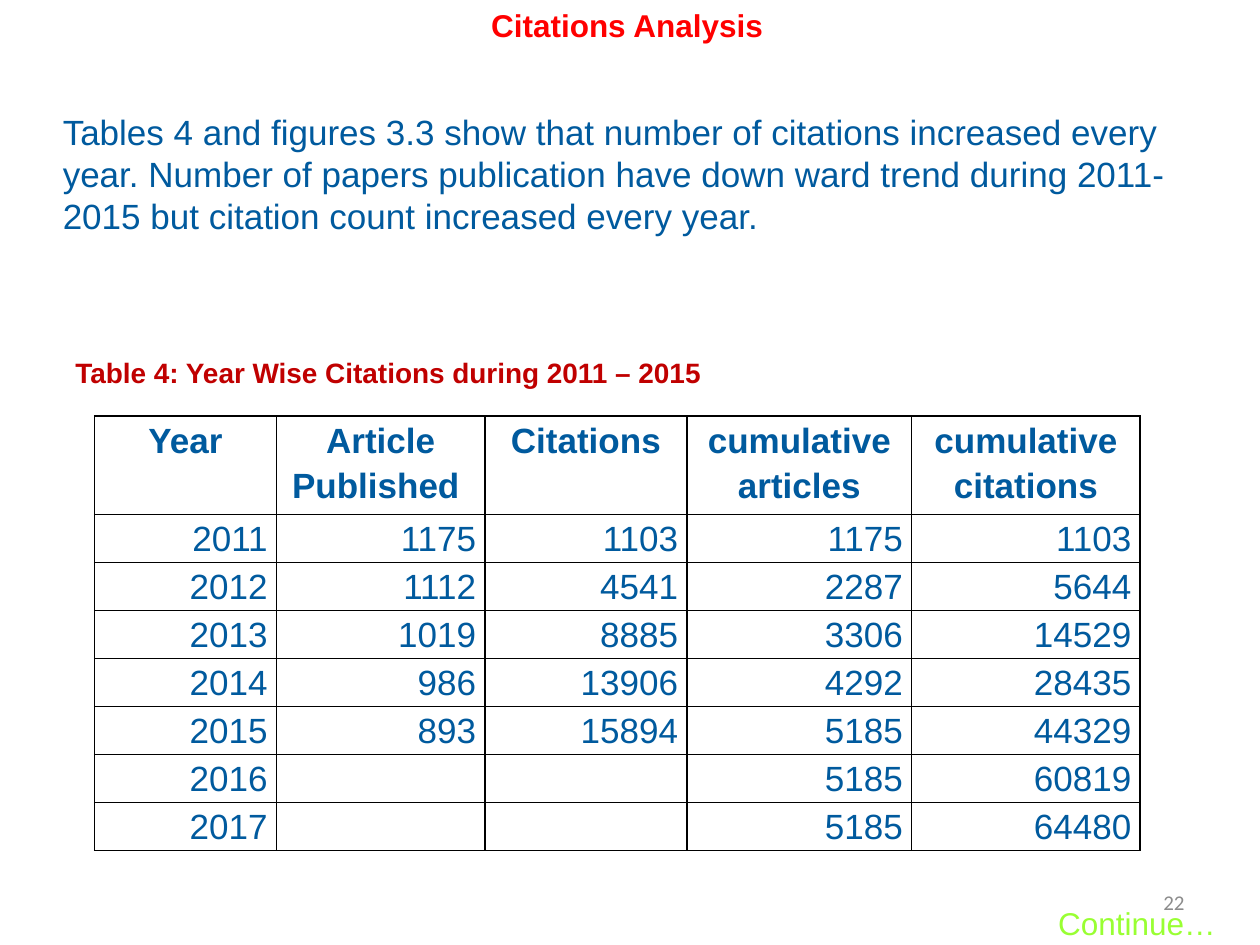
from lxml import etree
from pptx import Presentation
from pptx.dml.color import RGBColor
from pptx.enum.text import MSO_ANCHOR, PP_ALIGN
from pptx.oxml.ns import qn
from pptx.util import Inches, Pt

LEFT, CENTER, RIGHT = PP_ALIGN.LEFT, PP_ALIGN.CENTER, PP_ALIGN.RIGHT
TOP, MIDDLE = MSO_ANCHOR.TOP, MSO_ANCHOR.MIDDLE
WIDTH, HEIGHT = Inches(10), Inches(7.5)
COLORS = {
    "title": "FF0000",
    "caption": "C00000",
    "body": "005A9E",
    "continue": "99FF33",
    "number": "8C8C8C",
    "border": "000000",
    "background": "FFFFFF",
}
COLUMN_WEIGHTS = [1.45, 1.66, 1.61, 1.79, 1.82]
HEADER_WEIGHT, ROW_WEIGHT = 0.78, 0.38
CITATIONS = [
    ["Year", "Article Published ", "Citations", "cumulative articles", "cumulative citations"],
    ["2011", "1175", "1103", "1175", "1103"],
    ["2012", "1112", "4541", "2287", "5644"],
    ["2013", "1019", "8885", "3306", "14529"],
    ["2014", "986", "13906", "4292", "28435"],
    ["2015", "893", "15894", "5185", "44329"],
    ["2016", "", "", "5185", "60819"],
    ["2017", "", "", "5185", "64480"],
]


def scale(box):
    left, top, width, height = box
    return int(left * WIDTH), int(top * HEIGHT), int(width * WIDTH), int(height * HEIGHT)


def style_paragraph(paragraph, size, color, bold=False, align=LEFT, name="Arial"):
    paragraph.alignment = align
    font = paragraph.font
    font.name, font.size, font.bold = name, Pt(size), bold
    font.color.rgb = RGBColor.from_string(COLORS[color])


def add_text(slide, box, text, size, color, wrap=False, anchor=TOP, **style):
    frame = slide.shapes.add_textbox(*scale(box)).text_frame
    frame.word_wrap = wrap
    frame.vertical_anchor = anchor
    frame.text = text
    style_paragraph(frame.paragraphs[0], size, color, **style)


def add_borders(cell):
    properties = cell._tc.get_or_add_tcPr()
    for side in ("lnL", "lnR", "lnT", "lnB"):
        line = etree.SubElement(properties, qn(f"a:{side}"), w=str(Pt(1)))
        fill = etree.SubElement(line, qn("a:solidFill"))
        etree.SubElement(fill, qn("a:srgbClr"), val=COLORS["border"])


def fill_cell(cell, text, is_header):
    cell.margin_left = cell.margin_right = Inches(0.07)
    cell.margin_top = cell.margin_bottom = 0
    add_borders(cell)
    cell.fill.background()
    cell.text = text
    paragraph = cell.text_frame.paragraphs[0]
    paragraph.line_spacing = 1.15
    style_paragraph(paragraph, 20, "body", bold=is_header, align=CENTER if is_header else RIGHT)


def add_citation_table(slide, box):
    left, top, width, height = scale(box)
    table = slide.shapes.add_table(
        len(CITATIONS), len(COLUMN_WEIGHTS), left, top, width, height
    ).table
    table.horz_banding = False
    row_weights = [HEADER_WEIGHT] + [ROW_WEIGHT] * (len(CITATIONS) - 1)
    for column, weight in zip(table.columns, COLUMN_WEIGHTS):
        column.width = int(width * weight / sum(COLUMN_WEIGHTS))
    for row, weight, values in zip(table.rows, row_weights, CITATIONS):
        row.height = int(height * weight / sum(row_weights))
        for cell, value in zip(row.cells, values):
            fill_cell(cell, value, values is CITATIONS[0])


def add_heading(slide, box):
    add_text(slide, box, "Citations Analysis", 18, "title", bold=True)


def add_summary(slide, box):
    add_text(
        slide,
        box,
        "Tables 4 and figures 3.3 show that number of citations increased every year. "
        "Number of papers publication have down ward trend during 2011-2015 "
        "but citation count increased every year.",
        20,
        "body",
        wrap=True,
    )


def add_caption(slide, box):
    add_text(
        slide, box, "Table 4: Year Wise Citations during 2011 – 2015", 16, "caption", bold=True
    )


def add_footer(slide, continue_box, number_box):
    add_text(slide, continue_box, "Continue…", 18, "continue")
    add_text(
        slide, number_box, "22", 12, "number",
        wrap=True, anchor=MIDDLE, align=RIGHT, name="Calibri",
    )


def main():
    presentation = Presentation()
    presentation.slide_width, presentation.slide_height = WIDTH, HEIGHT
    slide = presentation.slides.add_slide(presentation.slide_layouts[6])
    background = slide.background.fill
    background.solid()
    background.fore_color.rgb = RGBColor.from_string(COLORS["background"])
    add_citation_table(slide, (0.075, 0.44, 0.83, 0.46))
    add_caption(slide, (0.05, 0.37, 0.53, 0.05))
    add_heading(slide, (0.38, 0, 0.24, 0.05))
    add_summary(slide, (0.04, 0.11, 0.9, 0.15))
    add_footer(slide, (0.83, 0.95, 0.15, 0.05), (0.72, 0.93, 0.23, 0.05))
    presentation.save("out.pptx")


if __name__ == "__main__":
    main()
